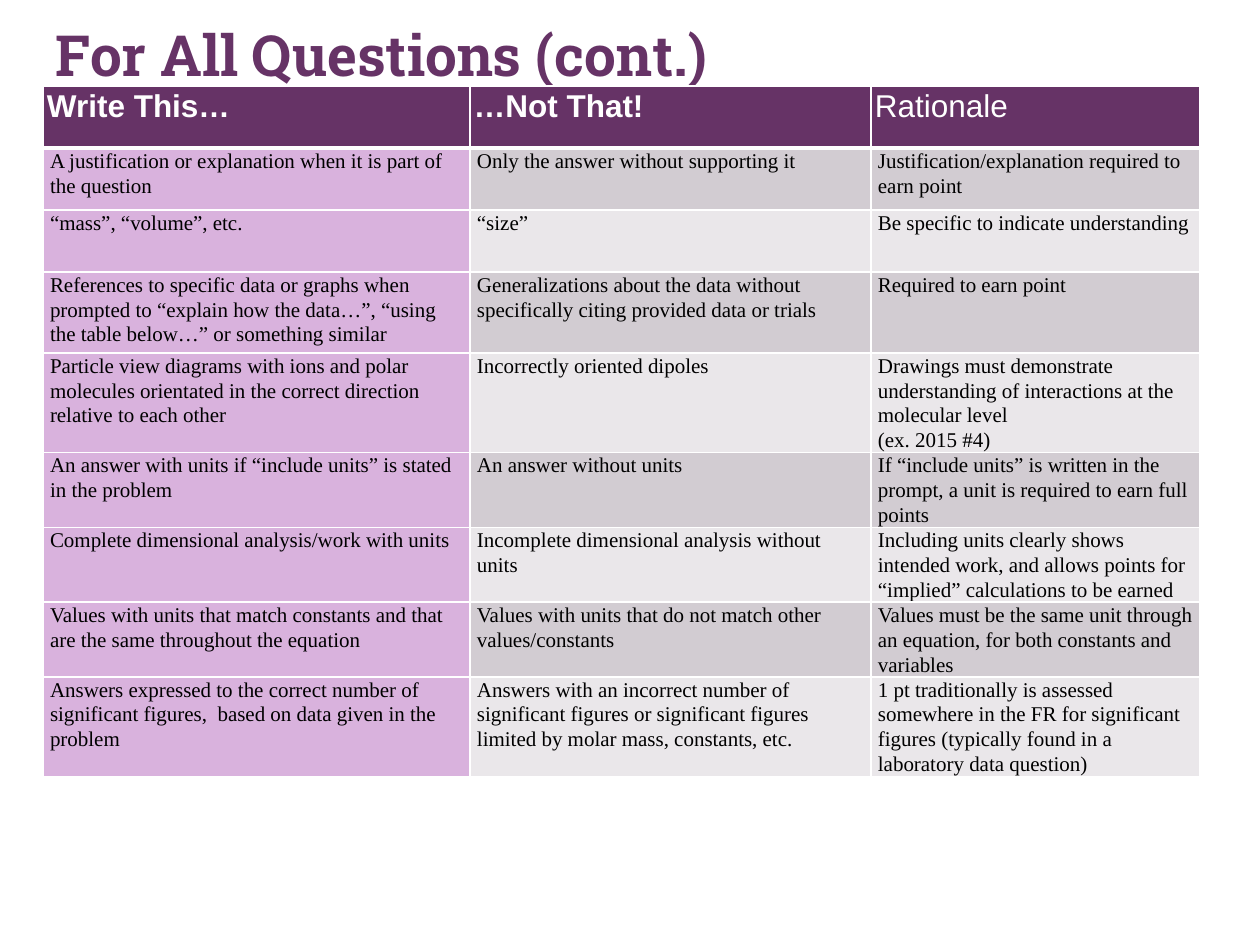
from pptx import Presentation
from pptx.dml.color import RGBColor
from pptx.enum.text import MSO_ANCHOR, MSO_AUTO_SIZE, PP_ALIGN
from pptx.oxml.ns import qn
from pptx.util import Pt
from lxml import etree

TOP = MSO_ANCHOR.TOP
LEFT = PP_ALIGN.LEFT
NO_AUTOFIT = MSO_AUTO_SIZE.NONE

PX = 914400 // 126
COLORS = {
    "purple": "663366",
    "lilac": "D9B2DD",
    "band_dark": "D2CCD2",
    "band_light": "EAE7EA",
    "white": "FFFFFF",
    "black": "000000",
}

COLUMN_WIDTHS = [427, 401, 329]
ROW_HEIGHTS = [62, 62, 62, 81, 81, 62, 62, 62, 81]
HEADERS = ["Write This…", "…Not That!", "Rationale"]
ADVICE = [
    ["A justification or explanation when it is part of the question",
     "Only the answer without supporting it",
     "Justification/explanation required to earn point"],
    ["“mass”, “volume”, etc.", "“size”", "Be specific to indicate understanding"],
    ["References to specific data or graphs when prompted to “explain how the data…”, "
     "“using the table below…” or something similar",
     "Generalizations about the data without specifically citing provided data or trials",
     "Required to earn point"],
    ["Particle view diagrams with ions and polar molecules orientated in the correct "
     "direction relative to each other",
     "Incorrectly oriented dipoles",
     "Drawings must demonstrate understanding of interactions at the molecular level\n"
     "(ex. 2015 #4)"],
    ["An answer with units if “include units” is stated in the problem",
     "An answer without units",
     "If “include units” is written in the prompt, a unit is required to earn full points"],
    ["Complete dimensional analysis/work with units",
     "Incomplete dimensional analysis without units",
     "Including units clearly shows intended work, and allows points for “implied” "
     "calculations to be earned"],
    ["Values with units that match constants and that are the same throughout the equation",
     "Values with units that do not match other values/constants",
     "Values must be the same unit through an equation, for both constants and variables"],
    ["Answers expressed to the correct number of significant figures,  based on data given "
     "in the problem",
     "Answers with an incorrect number of significant figures or significant figures limited "
     "by molar mass, constants, etc.",
     "1 pt traditionally is assessed somewhere in the FR for significant figures (typically "
     "found in a laboratory data question)"],
]


def add_run(paragraph, text, font_name, size, color, bold):
    run = paragraph.add_run()
    run.text = text
    run.font.name = font_name
    run.font.size = Pt(size)
    run.font.bold = bold
    run.font.color.rgb = RGBColor.from_string(COLORS[color])


def set_borders(cell, bottom_width):
    properties = cell._tc.get_or_add_tcPr()
    widths = [("a:lnL", 1), ("a:lnR", 1), ("a:lnT", 1), ("a:lnB", bottom_width)]
    for position, (tag, width) in enumerate(widths):
        line = etree.Element(qn(tag), w=str(Pt(width)))
        fill = etree.SubElement(line, qn("a:solidFill"))
        etree.SubElement(fill, qn("a:srgbClr"), val=COLORS["white"])
        properties.insert(position, line)


def fill_cell(cell, text, fill, margin, bottom_width, **font):
    cell.fill.solid()
    cell.fill.fore_color.rgb = RGBColor.from_string(COLORS[fill])
    cell.margin_left = cell.margin_right = margin * PX
    cell.margin_top = cell.margin_bottom = 0
    cell.vertical_anchor = TOP
    set_borders(cell, bottom_width)
    for index, line in enumerate(text.split("\n")):
        frame = cell.text_frame
        paragraph = frame.add_paragraph() if index else frame.paragraphs[0]
        paragraph.line_spacing = 1.07
        add_run(paragraph, line, **font)


def place_title(slide, left, top, width, height):
    title = slide.shapes.title
    title.left, title.top = left * PX, top * PX
    title.width, title.height = width * PX, height * PX
    frame = title.text_frame
    frame.auto_size = NO_AUTOFIT
    frame.word_wrap = True
    frame.vertical_anchor = TOP
    paragraph = frame.paragraphs[0]
    paragraph.alignment = LEFT
    add_run(paragraph, "For All Questions (cont.)", "Roboto Slab", 32.4, "purple", True)


def add_advice_table(slide, left, top):
    frame = slide.shapes.add_table(
        len(ROW_HEIGHTS), len(COLUMN_WIDTHS), left * PX, top * PX,
        sum(COLUMN_WIDTHS) * PX, sum(ROW_HEIGHTS) * PX)
    table = frame.table
    for column, width in zip(table.columns, COLUMN_WIDTHS):
        column.width = width * PX
    for row, height in zip(table.rows, ROW_HEIGHTS):
        row.height = height * PX

    # Header row
    for column, text in enumerate(HEADERS):
        fill_cell(table.cell(0, column), text, "purple", 4, 3, font_name="Arial",
                  size=18, color="white", bold=column < 2)

    # Body rows: lilac first column, alternating bands elsewhere
    for row, texts in enumerate(ADVICE, start=1):
        band = "band_dark" if row % 2 else "band_light"
        for column, text in enumerate(texts):
            fill_cell(table.cell(row, column), text, band if column else "lilac", 7, 1,
                      font_name="Times New Roman", size=12, color="black", bold=False)
        if row == 1:
            for cell in table.rows[row].cells:
                cell._tc.tcPr.find(qn("a:lnT")).set("w", str(Pt(3)))


def main():
    presentation = Presentation()
    presentation.slide_width = 1260 * PX
    presentation.slide_height = 945 * PX
    slide = presentation.slides.add_slide(presentation.slide_layouts[5])
    place_title(slide, 43, 14, 960, 67)
    add_advice_table(slide, 43, 86)
    presentation.save("out.pptx")


if __name__ == "__main__":
    main()
